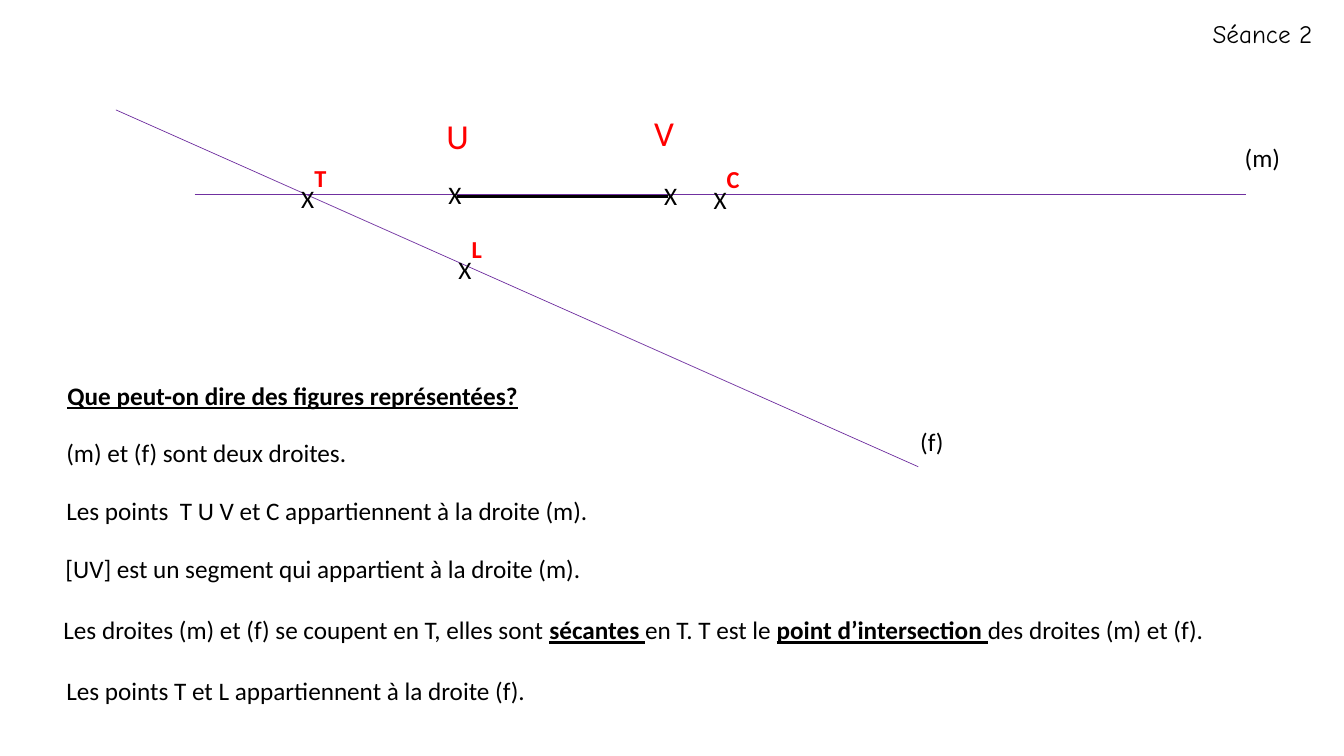
from lxml.etree import SubElement
from pptx import Presentation
from pptx.dml.color import RGBColor
from pptx.enum.shapes import MSO_CONNECTOR
from pptx.enum.text import MSO_ANCHOR, MSO_AUTO_SIZE, PP_ALIGN
from pptx.oxml.ns import qn
from pptx.util import Pt

COLORS = {"ink": "000000", "label": "FF0000", "line": "7030A0"}


def style(span, size=18, color="ink", bold=False, underline=False, font="Calibri"):
    span.font.name = font
    span.font.size = Pt(size)
    span.font.bold = bold
    span.font.underline = underline
    span.font.color.rgb = RGBColor.from_string(COLORS[color])


def add_label(left, top, width, height, text, **look):
    box = page.shapes.add_textbox(Pt(left), Pt(top), Pt(width), Pt(height))
    box.text_frame.word_wrap = False
    box.text_frame.auto_size = MSO_AUTO_SIZE.SHAPE_TO_FIT_TEXT
    para = box.text_frame.paragraphs[0]
    para.text = text
    style(para.runs[0], **look)
    return para


deck = Presentation()
deck.slide_width, deck.slide_height = Pt(960), Pt(540)
page = deck.slides.add_slide(deck.slide_layouts[5])

title = page.shapes.title
title.left, title.top, title.width, title.height = Pt(41), Pt(267.8), Pt(501), Pt(28.8)
frame = title.text_frame
frame.text = "Que peut-on dire des figures représentées?"
frame.word_wrap = True
frame.auto_size = MSO_AUTO_SIZE.NONE
frame.vertical_anchor = MSO_ANCHOR.TOP
frame.paragraphs[0].alignment = PP_ALIGN.LEFT
style(frame.paragraphs[0].runs[0], bold=True, underline=True)

for start_x, start_y, end_x, end_y, color, weight in [
    (139, 139, 890, 139, "line", 0.5),
    (326.2, 140.4, 477.4, 140.4, "ink", 2.25),
    (82.8, 78.5, 655.9, 333.4, "line", 0.5),
]:
    line = page.shapes.add_connector(
        MSO_CONNECTOR.STRAIGHT, Pt(start_x), Pt(start_y), Pt(end_x), Pt(end_y)
    )
    line.line.color.rgb = RGBColor.from_string(COLORS[color])
    line.line.width = Pt(weight)
    SubElement(line._element.spPr, qn("a:effectLst"))

for left, top, width, name in [
    (208.1, 113, 34.6, "T"),
    (502.6, 113.8, 34.6, "C"),
    (320.4, 163.4, 32.4, "L"),
]:
    para = add_label(left, top, width, 43.9, "X")
    span = para.add_run()
    span.text = name
    style(span, size=30, color="label", bold=True)
    span.font._element.set("baseline", "50000")

for left, top, width, name in [(311.8, 78.5, 31, "U"), (460.1, 76.3, 28.8, "V")]:
    add_label(left, top, width, 37.4, name, size=25, color="label")

for left, top, width, text in [
    (313.2, 124.6, 23.8, "X"),
    (467.3, 125.3, 23.8, "X"),
    (882, 97.9, 40.3, "(m)"),
    (650.2, 301, 31.7, "(f)"),
    (40.3, 308.9, 217.4, "(m) et (f) sont deux droites."),
    (40.3, 350.6, 391.7, "Les points  T U V et C appartiennent à la droite (m)."),
    (39.6, 391.7, 387.4, "[UV] est un segment qui appartient à la droite (m)."),
    (40.3, 478.8, 350.6, "Les points T et L appartiennent à la droite (f)."),
]:
    add_label(left, top, width, 28.8, text)

add_label(859, 9.4, 97.2, 28.8, "Séance 2", font="Comic Neue")

conclusion = add_label(
    38.2, 435.6, 834.5, 28.8, "Les droites (m) et (f) se coupent en T, elles sont "
)
for text, key_term in [
    ("sécantes ", True),
    ("en T. T est le ", False),
    ("point d’intersection ", True),
    ("des droites (m) et (f).", False),
]:
    span = conclusion.add_run()
    span.text = text
    style(span, bold=key_term, underline=key_term)

deck.save("out.pptx")
